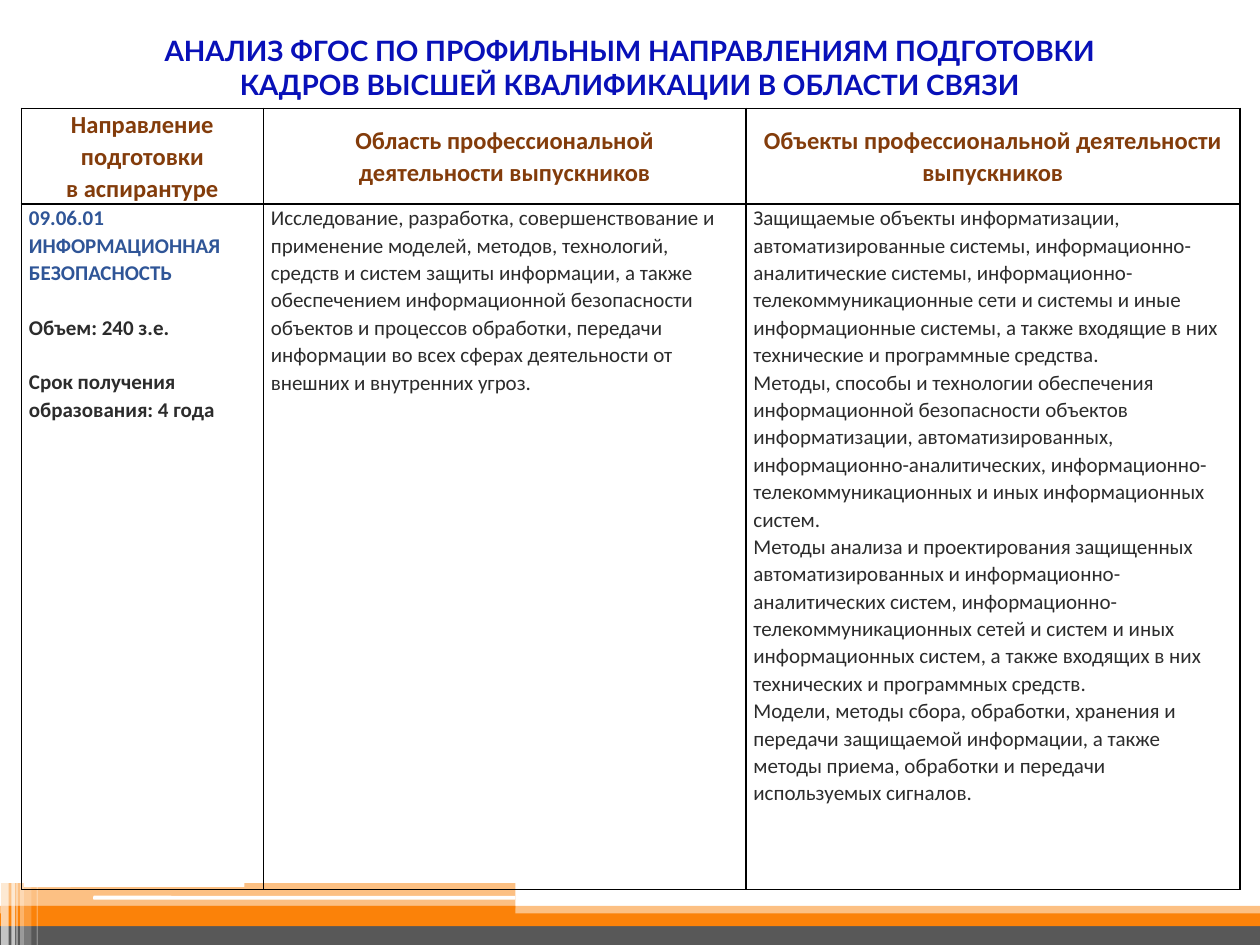
from lxml.etree import SubElement
from pptx import Presentation
from pptx.dml.color import RGBColor
from pptx.enum.shapes import MSO_SHAPE
from pptx.enum.text import MSO_ANCHOR, PP_ALIGN
from pptx.oxml.ns import qn
from pptx.util import Inches, Pt

BLACK = RGBColor(0x00, 0x00, 0x00)
WHITE = RGBColor(0xFF, 0xFF, 0xFF)
ORANGE = RGBColor(0xFB, 0x82, 0x09)
GRAY = RGBColor(0x58, 0x58, 0x58)
TITLE_BLUE = RGBColor(0x08, 0x10, 0xB8)
BROWN = RGBColor(0x83, 0x3C, 0x0B)
CODE_BLUE = RGBColor(0x2F, 0x55, 0x97)
TEXT_DARK = RGBColor(0x2C, 0x2C, 0x2C)

SLIDE_WIDTH, SLIDE_HEIGHT = 10, 7.5
BLANK_LINE = 15.6

BANDS = [
    (0, 7.19, SLIDE_WIDTH, 0.09, ORANGE, 50),
    (0, 7.31, SLIDE_WIDTH, 0.19, GRAY, 100),
    (0, 7.25, SLIDE_WIDTH, 0.1, ORANGE, 100),
    (0.01, 7.19, 4.08, 0.1, ORANGE, 100),
    (0.01, 7.01, 4.08, 0.2, ORANGE, 50),
]
ROUNDED_BARS = [(0.74, 7.11, 3.35, 0.03), (0.19, 7, 1.75, 0.04)]
STRIPES = [
    (0.01, 6.82, 0.06, 65),
    (0.09, 6.82, 0.03, 65),
    (0.13, 6.82, 0.01, 60),
    (0.16, 6.82, 0.03, 40),
    (0.19, 6.86, 0.06, 20),
    (0.29, 6.86, 0.01, 30),
]

TITLE = [
    "АНАЛИЗ ФГОС ПО ПРОФИЛЬНЫМ НАПРАВЛЕНИЯМ ПОДГОТОВКИ",
    "КАДРОВ ВЫСШЕЙ КВАЛИФИКАЦИИ В ОБЛАСТИ СВЯЗИ",
]
COLUMN_WIDTHS = [1.92, 3.83, 3.92]
ROW_HEIGHTS = [0.76, 5.44]
HEADERS = [
    ["Направление подготовки", "в аспирантуре"],
    ["Область профессиональной", "деятельности выпускников"],
    ["Объекты профессиональной деятельности выпускников"],
]
PROGRAM = [
    ("09.06.01 ИНФОРМАЦИОННАЯ БЕЗОПАСНОСТЬ", CODE_BLUE),
    ("Объем: 240 з.е.", TEXT_DARK),
    ("Срок получения образования: 4 года", TEXT_DARK),
]
AREA = [
    "Исследование, разработка, совершенствование и применение моделей, методов, "
    "технологий, средств и систем защиты информации, а также обеспечением "
    "информационной безопасности объектов и процессов обработки, передачи информации "
    "во всех сферах деятельности от внешних и внутренних угроз.",
]
OBJECTS = [
    "Защищаемые объекты информатизации, автоматизированные системы, "
    "информационно-аналитические системы, информационно-телекоммуникационные сети и "
    "системы и иные информационные системы, а также входящие в них технические и "
    "программные средства.",
    "Методы, способы и технологии обеспечения информационной безопасности объектов "
    "информатизации, автоматизированных, информационно-аналитических, "
    "информационно-телекоммуникационных и иных информационных систем.",
    "Методы анализа и проектирования защищенных автоматизированных и "
    "информационно-аналитических систем, информационно-телекоммуникационных сетей и "
    "систем и иных информационных систем, а также входящих в них технических и "
    "программных средств.",
    "Модели, методы сбора, обработки, хранения и передачи защищаемой информации, а "
    "также методы приема, обработки и передачи используемых сигналов.",
]


def add_bar(slide, left, top, width, height, color, opacity=100, kind=MSO_SHAPE.RECTANGLE):
    """Add a borderless bar, optionally see-through."""
    shape = slide.shapes.add_shape(
        kind, Inches(left), Inches(top), Inches(width), Inches(height)
    )
    shape.shadow.inherit = False
    shape.line.fill.background()
    shape.fill.solid()
    shape.fill.fore_color.rgb = color
    if opacity < 100:
        color_element = shape.fill._xPr.find(qn("a:solidFill"))[0]
        SubElement(color_element, qn("a:alpha"), val=str(opacity * 1000))


def add_footer(slide):
    """Add the decorative bands and stripes at the bottom."""
    for band in BANDS:
        add_bar(slide, *band)
    for bar in ROUNDED_BARS:
        add_bar(slide, *bar, WHITE, kind=MSO_SHAPE.ROUNDED_RECTANGLE)
    for left, top, width, opacity in STRIPES:
        add_bar(slide, left, top, width, SLIDE_HEIGHT - top, WHITE, opacity)


def add_lines(paragraph, lines, font_name, size, color, bold):
    """Add one run per line, with line breaks between them."""
    for index, line in enumerate(lines):
        if index:
            paragraph.add_line_break()
        run = paragraph.add_run()
        run.text = line
        run.font.name = font_name
        run.font.size = Pt(size)
        run.font.bold = bold
        run.font.color.rgb = color


def add_title(slide):
    """Add the centred slide title."""
    box = slide.shapes.add_textbox(0, Inches(0.21), Inches(SLIDE_WIDTH), Inches(0.65))
    frame = box.text_frame
    frame.word_wrap = True
    frame.vertical_anchor = MSO_ANCHOR.MIDDLE
    paragraph = frame.paragraphs[0]
    paragraph.alignment = PP_ALIGN.CENTER
    add_lines(paragraph, TITLE, "Lato", 16, TITLE_BLUE, True)


def format_cell(cell):
    """Give a cell its margins, thin black borders and no fill."""
    cell.margin_left = cell.margin_right = Inches(0.06)
    cell.margin_top = cell.margin_bottom = 0
    properties = cell._tc.get_or_add_tcPr()
    for side in ("a:lnL", "a:lnR", "a:lnT", "a:lnB"):
        line = SubElement(properties, qn(side), w=str(Pt(1)))
        fill = SubElement(line, qn("a:solidFill"))
        SubElement(fill, qn("a:srgbClr"), val=str(BLACK))
    cell.fill.background()


def fill_cell(cell, paragraphs, size, bold, gap=0, alignment=PP_ALIGN.LEFT):
    """Write paragraphs, each a pair of lines and colour, into a cell."""
    frame = cell.text_frame
    for index, (lines, color) in enumerate(paragraphs):
        paragraph = frame.add_paragraph() if index else frame.paragraphs[0]
        paragraph.alignment = alignment
        paragraph.line_spacing = 1.07
        if index and gap:
            paragraph.space_before = Pt(gap)
        add_lines(paragraph, lines, "Calibri", size, color, bold)


def add_standards_table(slide):
    """Add the table of the training programme."""
    table = slide.shapes.add_table(
        len(ROW_HEIGHTS), len(COLUMN_WIDTHS), Inches(0.17), Inches(0.86),
        Inches(sum(COLUMN_WIDTHS)), Inches(sum(ROW_HEIGHTS)),
    ).table
    for column, width in zip(table.columns, COLUMN_WIDTHS):
        column.width = Inches(width)
    for row, height in zip(table.rows, ROW_HEIGHTS):
        row.height = Inches(height)
    for cell in table.iter_cells():
        format_cell(cell)
    for index, lines in enumerate(HEADERS):
        cell = table.cell(0, index)
        cell.vertical_anchor = MSO_ANCHOR.MIDDLE
        fill_cell(cell, [(lines, BROWN)], 14, True, alignment=PP_ALIGN.CENTER)
    program = [([text], color) for text, color in PROGRAM]
    fill_cell(table.cell(1, 0), program, 12, True, gap=BLANK_LINE)
    for index, texts in enumerate((AREA, OBJECTS), start=1):
        fill_cell(table.cell(1, index), [([text], TEXT_DARK) for text in texts], 12, False)


def main():
    """Build and save the presentation."""
    presentation = Presentation()
    presentation.slide_width = Inches(SLIDE_WIDTH)
    presentation.slide_height = Inches(SLIDE_HEIGHT)
    slide = presentation.slides.add_slide(presentation.slide_layouts[6])
    add_footer(slide)
    add_title(slide)
    add_standards_table(slide)
    presentation.save("out.pptx")


if __name__ == "__main__":
    main()
